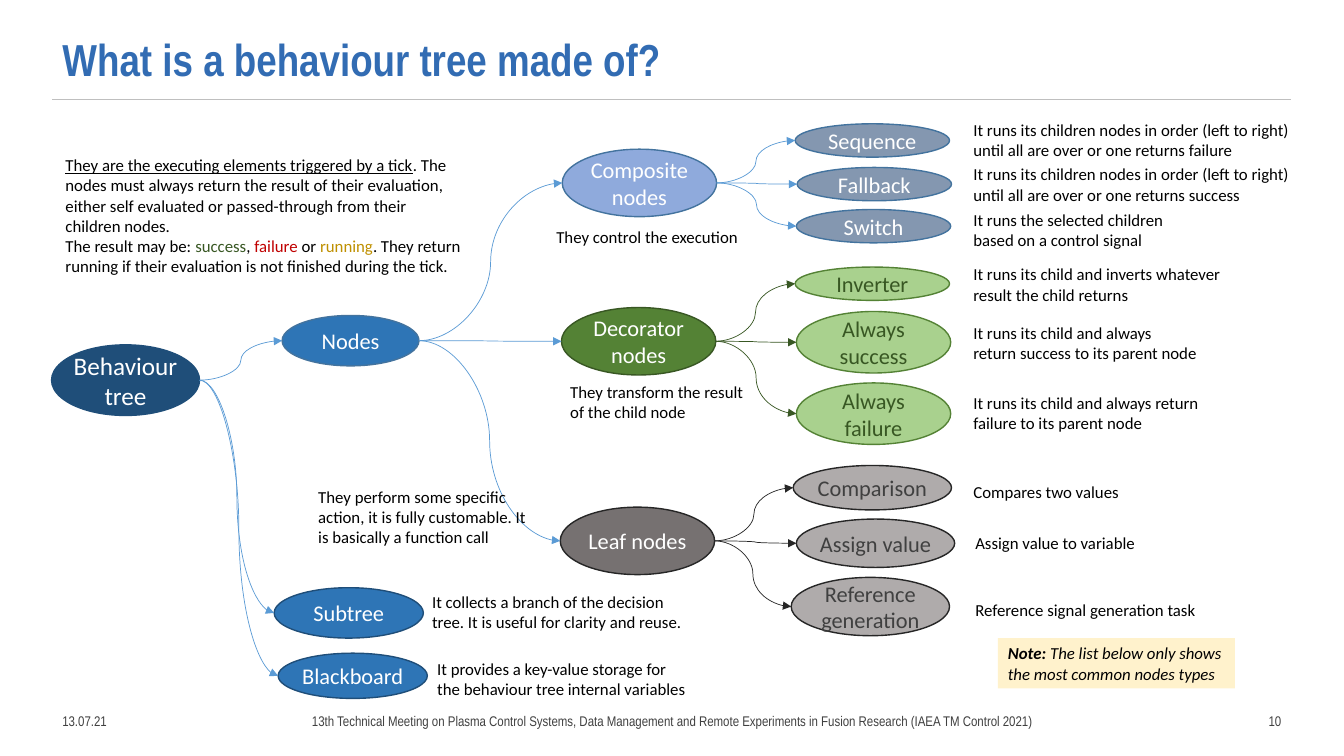
from lxml import etree
from pptx import Presentation
from pptx.dml.color import RGBColor
from pptx.enum.shapes import MSO_CONNECTOR, MSO_SHAPE
from pptx.enum.text import MSO_ANCHOR, MSO_AUTO_SIZE, PP_ALIGN
from pptx.oxml.ns import qn
from pptx.util import Cm, Pt

STRAIGHT, CURVE = MSO_CONNECTOR.STRAIGHT, MSO_CONNECTOR.CURVE
ELLIPSE, RECTANGLE = MSO_SHAPE.OVAL, MSO_SHAPE.RECTANGLE
LEFT, CENTER, RIGHT = PP_ALIGN.LEFT, PP_ALIGN.CENTER, PP_ALIGN.RIGHT
TOP, MIDDLE, BOTTOM = MSO_ANCHOR.TOP, MSO_ANCHOR.MIDDLE, MSO_ANCHOR.BOTTOM
NO_AUTOFIT = MSO_AUTO_SIZE.NONE

WHITE = RGBColor(0xFF, 0xFF, 0xFF)
BLACK = RGBColor(0x00, 0x00, 0x00)
TITLE_BLUE = RGBColor(0x32, 0x6C, 0xB3)
RULE_GREY = RGBColor(0xBF, 0xBF, 0xBF)
DARK_GREY = RGBColor(0x40, 0x40, 0x40)
CHARCOAL = RGBColor(0x26, 0x26, 0x26)
MID_GREY = RGBColor(0x76, 0x71, 0x71)
LIGHT_GREY = RGBColor(0xAF, 0xAB, 0xAB)
NAVY = RGBColor(0x1F, 0x4E, 0x79)
BLUE = RGBColor(0x2E, 0x75, 0xB6)
STEEL = RGBColor(0x43, 0x73, 0x9E)
PERIWINKLE = RGBColor(0x8F, 0xAA, 0xDC)
SLATE = RGBColor(0x84, 0x97, 0xB0)
SKY = RGBColor(0x5B, 0x9B, 0xD5)
DARK_GREEN = RGBColor(0x38, 0x57, 0x23)
GREEN = RGBColor(0x54, 0x82, 0x35)
LIGHT_GREEN = RGBColor(0xA9, 0xD1, 0x8E)
RED = RGBColor(0xC0, 0x00, 0x00)
GOLD = RGBColor(0xBF, 0x90, 0x00)
CREAM = RGBColor(0xFF, 0xF2, 0xCC)

HEADING_FONT, BODY_FONT = "Arial Narrow", "Calibri"
MARGIN_LEFT, MARGIN_RIGHT = 1.32, 32.54

TITLE = "What is a behaviour tree made of?"

FOOTERS = [
    ("13.07.21", 1.32, 3.1, LEFT),
    ("13th Technical Meeting on Plasma Control Systems, Data Management and Remote "
     "Experiments in Fusion Research (IAEA TM Control 2021)", 5.03, 23.8, CENTER),
    ("10", 29.54, 3.0, RIGHT),
]

# fill, outline, text
STYLES = {
    "root": (NAVY, NAVY, WHITE),
    "nodes": (BLUE, STEEL, WHITE),
    "part": (BLUE, NAVY, WHITE),
    "composite": (PERIWINKLE, STEEL, WHITE),
    "decorator": (GREEN, DARK_GREEN, WHITE),
    "leaf": (MID_GREY, CHARCOAL, WHITE),
    "control": (SLATE, STEEL, WHITE),
    "modifier": (LIGHT_GREEN, GREEN, DARK_GREEN),
    "action": (LIGHT_GREY, CHARCOAL, DARK_GREY),
}

# name, parent, style, left, top, width, height
TREE = [
    ("Behaviour tree", None, "root", 1.3, 8.69, 3.73, 1.78),
    ("Nodes", "Behaviour tree", "nodes", 7.11, 7.95, 3.45, 1.27),
    ("Subtree", "Behaviour tree", "part", 6.91, 14.81, 3.76, 1.27),
    ("Blackboard", "Behaviour tree", "part", 7.01, 16.46, 3.76, 1.14),
    ("Composite nodes", "Nodes", "composite", 14.17, 3.76, 3.89, 1.7),
    ("Decorator nodes", "Nodes", "decorator", 14.15, 7.75, 3.89, 1.7),
    ("Leaf nodes", "Nodes", "leaf", 14.12, 12.78, 3.89, 1.7),
    ("Sequence", "Composite nodes", "control", 20.04, 3.12, 3.89, 0.84),
    ("Fallback", "Composite nodes", "control", 20.09, 4.22, 3.89, 0.84),
    ("Switch", "Composite nodes", "control", 20.07, 5.28, 3.89, 0.84),
    ("Inverter", "Decorator nodes", "modifier", 20.04, 6.73, 3.89, 0.84),
    ("Always success", "Decorator nodes", "modifier", 20.07, 7.85, 3.89, 1.55),
    ("Always failure", "Decorator nodes", "modifier", 20.07, 9.65, 3.89, 1.55),
    ("Comparison", "Leaf nodes", "action", 19.99, 11.73, 3.99, 1.12),
    ("Assign value", "Leaf nodes", "action", 20.07, 13.08, 3.99, 1.22),
    ("Reference generation", "Leaf nodes", "action", 19.94, 14.55, 3.99, 1.47),
]
LINK_COLOURS = {"Decorator nodes": DARK_GREEN, "Leaf nodes": CHARCOAL}

# text, left, top, width, lines
CAPTIONS = [
    ("It collects a branch of the decision tree. It is useful for clarity and reuse.",
     10.64, 14.78, 6.96, 2),
    ("It provides a key-value storage for the behaviour tree internal variables",
     10.77, 16.48, 6.78, 2),
    ("They perform some specific action, it is fully customable. "
     "It is basically a function call", 7.77, 12.14, 6.05, 3),
    ("They control the execution", 13.77, 5.59, 5.16, 1),
    ("They transform the result of the child node", 14.12, 9.5, 5.0, 2),
    ("It runs its children nodes in order (left to right) until all are over "
     "or one returns failure", 24.28, 2.9, 8.5, 2),
    ("It runs its children nodes in order (left to right) until all are over "
     "or one returns success", 24.28, 4.01, 8.5, 2),
    ("It runs the selected children based on a control signal", 24.28, 5.16, 5.38, 2),
    ("It runs its child and inverts whatever result the child returns",
     24.28, 6.53, 6.86, 2),
    ("It runs its child and always return success to its parent node",
     24.28, 8.0, 6.17, 2),
    ("It runs its child and always return failure to its parent node",
     24.28, 9.78, 6.86, 2),
    ("Compares two values", 24.28, 12.01, 4.22, 1),
    ("Assign value to variable", 24.33, 13.31, 4.57, 1),
    ("Reference signal generation task", 24.33, 14.99, 6.12, 1),
]

EXPLANATION = [
    [("They are the executing elements triggered by a tick", {"underline": True}),
     (". The nodes must always return the result of their evaluation, either self "
      "evaluated or passed-through from their children nodes.", {})],
    [("The result may be: ", {}), ("success", {"colour": DARK_GREEN}), (", ", {}),
     ("failure", {"colour": RED}), (" or ", {}), ("running", {"colour": GOLD}),
     (". They return running if their evaluation is not finished during the tick.", {})],
]

NOTE = [[("Note: ", {"bold": True, "italic": True}),
         ("The list below only shows the most common nodes types", {"italic": True})]]


def write(frame, paragraphs, size, font=BODY_FONT, colour=BLACK, align=LEFT,
          anchor=TOP, wrap=True):
    frame.word_wrap = wrap
    frame.auto_size = NO_AUTOFIT
    frame.vertical_anchor = anchor
    for index, spans in enumerate(paragraphs):
        para = frame.add_paragraph() if index else frame.paragraphs[0]
        para.alignment = align
        for text, look in spans:
            span = para.add_run()
            span.text = text
            span.font.name = font
            span.font.size = Pt(size)
            span.font.color.rgb = look.get("colour", colour)
            span.font.bold = look.get("bold", False)
            span.font.italic = look.get("italic", False)
            span.font.underline = look.get("underline", False)


def add_text(page, paragraphs, left, top, width, height, size, **options):
    box = page.shapes.add_textbox(Cm(left), Cm(top), Cm(width), Cm(height))
    write(box.text_frame, paragraphs, size, **options)


def text_height(lines):
    return 0.25 + 0.51 * lines


def add_line(page, kind, start, end, colour, weight):
    line = page.shapes.add_connector(kind, *map(Cm, start + end))
    line.line.color.rgb = colour
    line.line.width = Pt(weight)
    etree.SubElement(line._element.spPr, qn("a:effectLst"))
    return line


def add_filled(page, kind, left, top, width, height, fill):
    shape = page.shapes.add_shape(kind, Cm(left), Cm(top), Cm(width), Cm(height))
    shape.shadow.inherit = False
    shape.fill.solid()
    shape.fill.fore_color.rgb = fill
    return shape


def add_node(page, name, style, left, top, width, height):
    fill, outline, colour = STYLES[style]
    node = add_filled(page, ELLIPSE, left, top, width, height, fill)
    node.line.color.rgb = outline
    node.line.width = Pt(1)
    frame = node.text_frame
    frame.margin_left = frame.margin_right = frame.margin_top = frame.margin_bottom = 0
    write(frame, [[(name, {})]], 18 if style == "root" else 16,
          colour=colour, align=CENTER, anchor=MIDDLE)


def add_link(page, start, end, colour):
    link = add_line(page, CURVE, start, end, colour, 0.5)
    etree.SubElement(link.line._get_or_add_ln(), qn("a:tailEnd"), type="triangle")


def main():
    deck = Presentation()
    deck.slide_width, deck.slide_height = Cm(33.87), Cm(19.05)
    page = deck.slides.add_slide(deck.slide_layouts[5])

    title = page.shapes.title
    title.left, title.top, title.width, title.height = map(
        Cm, (MARGIN_LEFT, 0.53, 26.39, 1.78))
    write(title.text_frame, [[(TITLE, {"bold": True})]], 32, font=HEADING_FONT,
          colour=TITLE_BLUE, anchor=BOTTOM)
    title.text_frame.paragraphs[0].line_spacing = 0.9
    add_line(page, STRAIGHT, (MARGIN_LEFT, 2.51), (MARGIN_RIGHT, 2.51), RULE_GREY, 1)

    for text, left, width, align in FOOTERS:
        add_text(page, [[(text, {})]], left, 17.65, width, 1.02, 10,
                 font=HEADING_FONT, colour=DARK_GREY, align=align, anchor=MIDDLE)

    note = add_filled(page, RECTANGLE, 25.15, 16.08, 5.97, text_height(2), CREAM)
    note.line.fill.background()
    write(note.text_frame, NOTE, 12)

    exits = {}
    for name, parent, style, left, top, width, height in TREE:
        add_node(page, name, style, left, top, width, height)
        middle = top + height / 2
        exits[name] = (left + width, middle)
        if parent:
            add_link(page, exits[parent], (left, middle), LINK_COLOURS.get(parent, SKY))

    add_text(page, EXPLANATION, 1.4, 3.78, 10.52, text_height(6), 12)
    for text, left, top, width, lines in CAPTIONS:
        add_text(page, [[(text, {})]], left, top, width, text_height(lines), 12,
                 wrap=lines > 1)

    deck.save("out.pptx")


if __name__ == "__main__":
    main()
